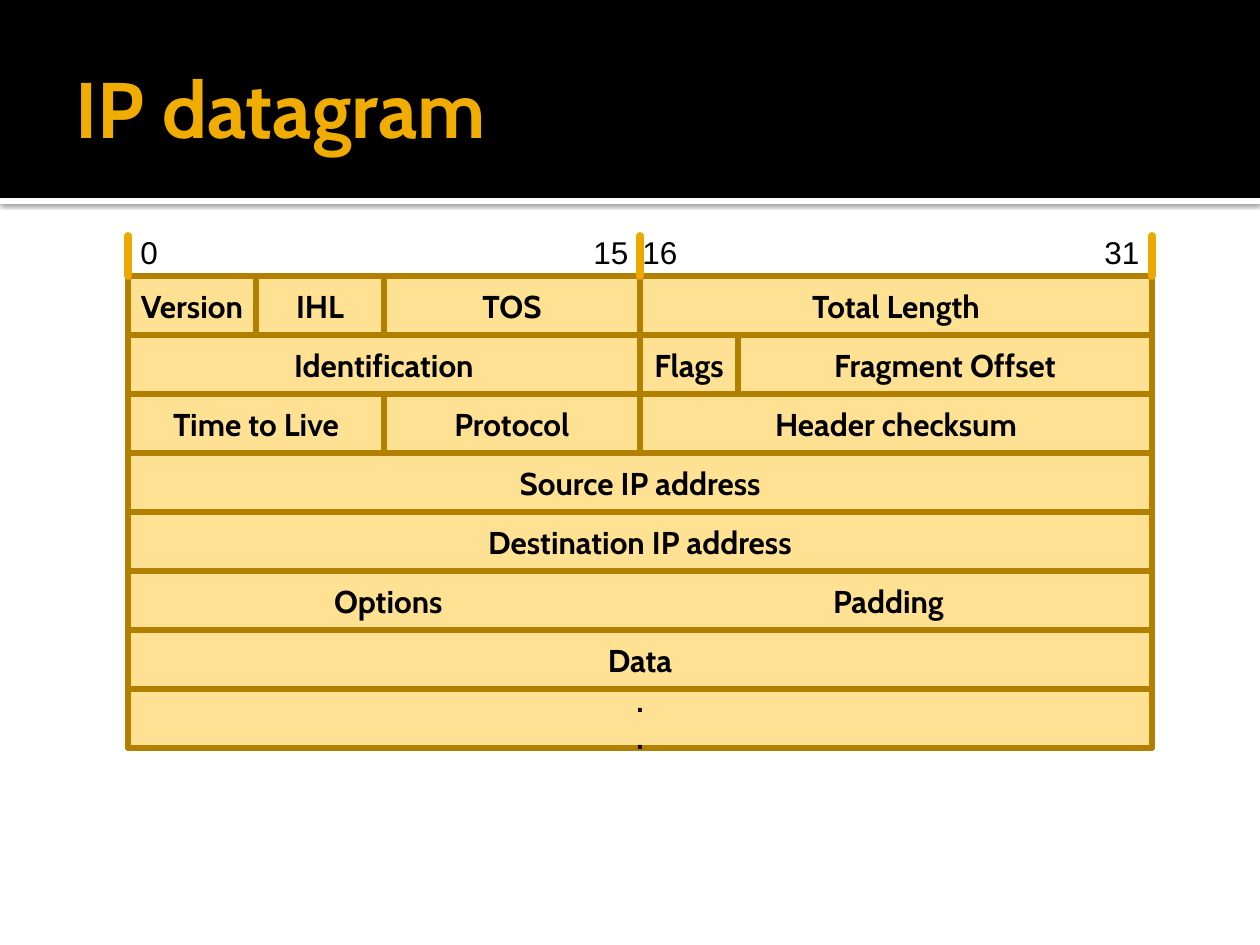
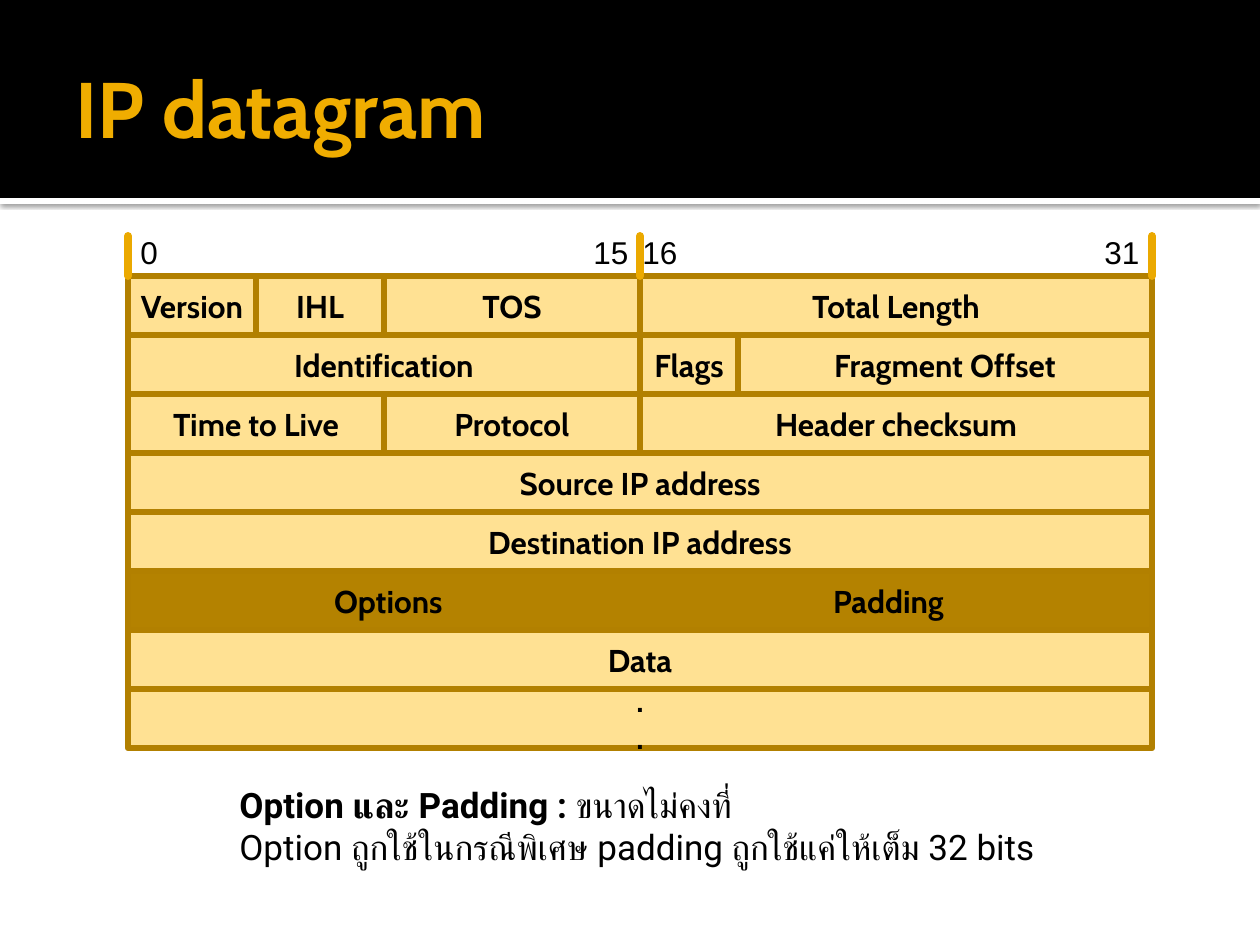
from lxml import etree
from pptx import Presentation
from pptx import util as u
from pptx.dml.color import RGBColor
from pptx.enum import shapes, text
from pptx.oxml import parse_xml
from pptx.oxml.ns import nsdecls, qn

BLACK = RGBColor(0x00, 0x00, 0x00)
WHITE = RGBColor(0xFF, 0xFF, 0xFF)
GOLD = RGBColor(0xF0, 0xAD, 0x00)
CREAM = RGBColor(0xFF, 0xE1, 0x93)
BROWN = RGBColor(0xB2, 0x80, 0x00)
DARK = RGBColor(0xB4, 0x82, 0x00)
AMBER = RGBColor(0xEB, 0xA9, 0x00)

PX = 914400 / 126
WIDE, TALL = 1260, 945
LEFT, TOP, ROW = 128, 276, 59
MID, RIGHT = LEFT + 512, LEFT + 1024

# Header rows: (field, width); the widths of each row add up to 1024
ROWS = [
    [("Version", 128), ("IHL", 128), ("TOS", 256), ("Total Length", 512)],
    [("Identification", 512), ("Flags", 98), ("Fragment Offset", 414)],
    [("Time to Live", 256), ("Protocol", 256), ("Header checksum", 512)],
    [("Source IP address", 1024)],
    [("Destination IP address", 1024)],
    [("\tOptions\tPadding", 1024)],
    [("Data", 1024)],
    [(".\n.", 1024)],
]
TABS = (248, 748)
BITS = [("0", LEFT, 43), ("15", 581, 60), ("16", 630, 60), ("31", 1092, 60)]
NOTE = [
    [("Option และ Padding : ", True), ("ขนาดไม่คงที่", False)],
    [("Option ถูกใช้ในกรณีพิเศษ padding ถูกใช้แค่ให้เต็ม 32 bits", False)],
]


def px(n):
    return u.Emu(round(n * PX))


def write(frame, lines, font="Cabin", size=18, color=BLACK, bold=False,
          align=text.PP_ALIGN.LEFT, anchor=text.MSO_ANCHOR.TOP, wrap=True):
    """Fill a frame; a line is a string or a list of (words, bold) runs."""
    frame.word_wrap = wrap
    frame.vertical_anchor = anchor
    for i, line in enumerate(lines):
        para = frame.paragraphs[0] if i == 0 else frame.add_paragraph()
        para.alignment = align
        for words, heavy in [(line, bold)] if isinstance(line, str) else line:
            run = para.add_run()
            run.text = words
            run.font.name, run.font.size = font, u.Pt(size)
            run.font.bold, run.font.color.rgb = heavy, color


class Deck:
    def __init__(self):
        self.prs = Presentation()
        self.prs.slide_width, self.prs.slide_height = px(WIDE), px(TALL)
        self.slide = None

    def page(self, title):
        self.slide = self.prs.slides.add_slide(self.prs.slide_layouts[6])
        strip = self.rect(0, 198, WIDE, 6, WHITE)
        self.shade(strip)
        self.rect(0, 0, WIDE, 198, BLACK)
        frame = self.label([title], 63, 21, 1134, 173, size=45, color=GOLD,
                           bold=True, anchor=text.MSO_ANCHOR.MIDDLE)
        frame.margin_right = u.Inches(0.05)

    def rect(self, x, y, w, h, fill, line=None):
        box = self.slide.shapes.add_shape(
            shapes.MSO_SHAPE.RECTANGLE, px(x), px(y), px(w), px(h))
        box.shadow.inherit = False
        box.fill.solid()
        box.fill.fore_color.rgb = fill
        if line is None:
            box.line.fill.background()
        else:
            box.line.color.rgb, box.line.width = line, u.Pt(3.78)
        return box

    def shade(self, box):
        props = box._element.spPr
        props.remove(props.find(qn("a:effectLst")))
        props.append(parse_xml(
            f'<a:effectLst {nsdecls("a")}><a:outerShdw blurRad="31750" '
            'dist="10160" dir="5400000" algn="tl" rotWithShape="0">'
            '<a:srgbClr val="000000"><a:alpha val="60000"/></a:srgbClr>'
            '</a:outerShdw></a:effectLst>'))

    def label(self, lines, x, y, w, h, **form):
        box = self.slide.shapes.add_textbox(px(x), px(y), px(w), px(h))
        write(box.text_frame, lines, **form)
        return box.text_frame

    def cell(self, words, x, y, w, fill):
        frame = self.rect(x, y, w, ROW, fill, BROWN).text_frame
        tabbed = "\t" in words
        align = text.PP_ALIGN.LEFT if tabbed else text.PP_ALIGN.CENTER
        write(frame, words.split("\n"), bold=True, align=align,
              anchor=text.MSO_ANCHOR.MIDDLE)
        if tabbed:
            props = frame.paragraphs[0]._p.get_or_add_pPr()
            stops = etree.SubElement(props, qn("a:tabLst"))
            for pos in TABS:
                etree.SubElement(stops, qn("a:tab"), pos=str(px(pos)), algn="ctr")

    def tick(self, x):
        line = self.slide.shapes.add_connector(
            shapes.MSO_CONNECTOR.STRAIGHT, px(x), px(TOP), px(x), px(236))
        line.line.color.rgb, line.line.width = AMBER, u.Pt(4.5)
        line.line._get_or_add_ln().set("cap", "rnd")
        etree.SubElement(line._element.spPr, qn("a:effectLst"))

    def header(self, marked=None):
        # Fields
        for i, row in enumerate(ROWS):
            x = LEFT
            for words, w in row:
                fill = DARK if i == marked else CREAM
                self.cell(words, x, TOP + i * ROW, w, fill)
                x += w
        # Bit scale
        for bit, x, w in BITS:
            self.label([bit], x, 227, w, 50, font="Arial", wrap=False)
        for x in (MID, LEFT, RIGHT):
            self.tick(x)


def main():
    deck = Deck()

    # Slide 1: plain header
    deck.page("IP datagram")
    deck.header()

    # Slide 2: options row marked and explained
    deck.page("IP datagram")
    deck.header(marked=5)
    deck.label(NOTE, 227, 777, 886, 97, font="Roboto", size=20, wrap=False)

    deck.prs.save("out.pptx")


if __name__ == "__main__":
    main()
